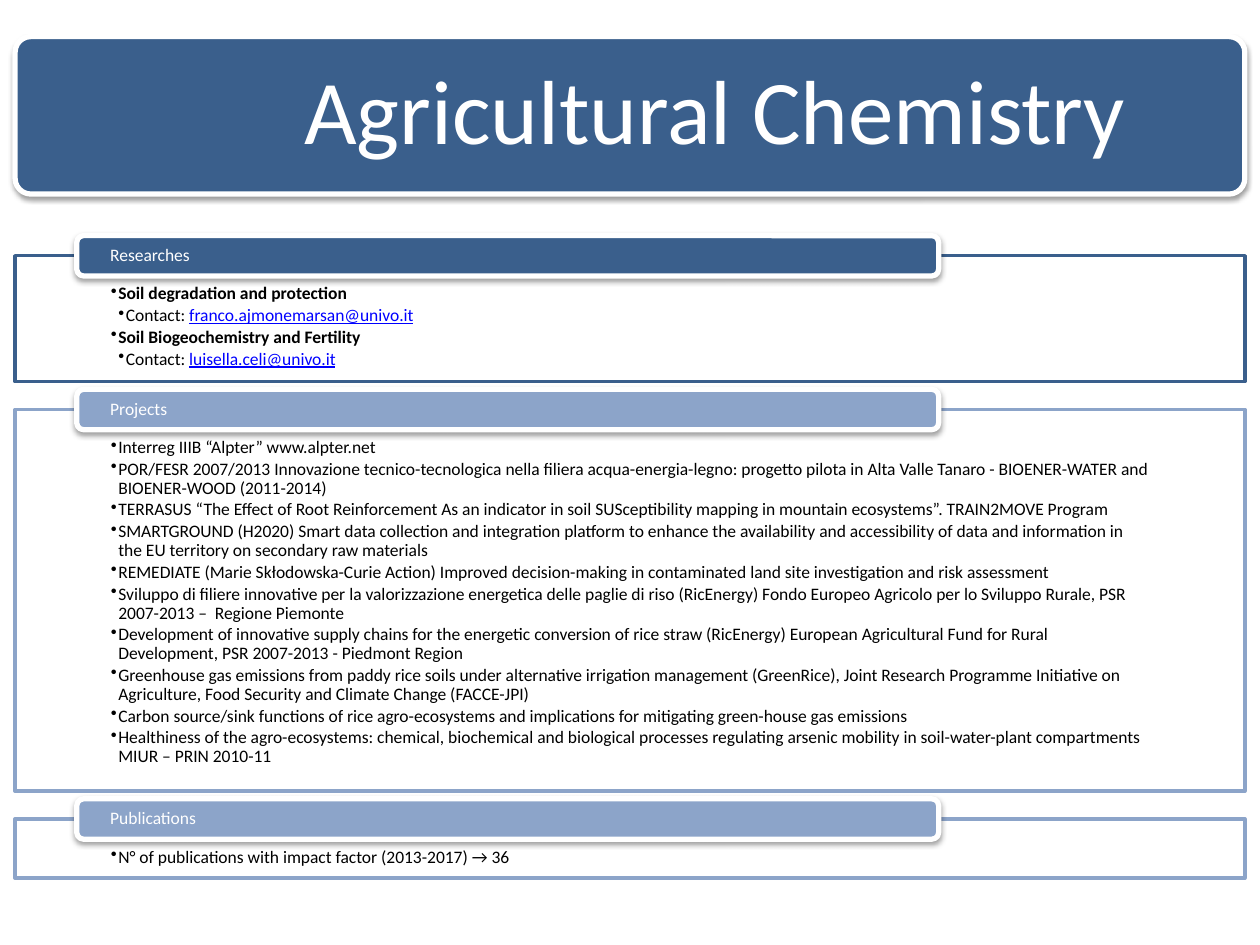
import lxml.etree
import pptx
import pptx.dml.color
import pptx.enum.shapes
import pptx.enum.text
import pptx.oxml.ns
import pptx.util

COLORS = {
    "navy": "3A5F8C",
    "periwinkle": "8CA4C9",
    "white": "FFFFFF",
    "black": "000000",
    "link": "0000FF",
}
FONT = "Calibri"
COLUMNS, ROWS = 100, 75
SLIDE_WIDTH, SLIDE_HEIGHT = pptx.util.Inches(10), pptx.util.Inches(7.5)
COLUMN, ROW = SLIDE_WIDTH / COLUMNS, SLIDE_HEIGHT / ROWS

LEFT, WIDTH = 1.2, 97.6
TITLE_BOX = (LEFT, 2.9, WIDTH, 12.5)
FIRST_SECTION_TOP, SECTION_GAP = 20.3, 2.2
TAB_INDENT, TAB_RISE, TAB_WIDTH, TAB_HEIGHT = 4.9, 1.6, 68.4, 3.2
BULLET_INDENT = 0.6

SECTIONS = [
    ("Researches", "navy", 10, [
        ("heading", "Soil degradation and protection"),
        ("contact", "franco.ajmonemarsan@univo.it"),
        ("heading", "Soil Biogeochemistry and Fertility"),
        ("contact", "luisella.celi@univo.it"),
    ]),
    ("Projects", "periwinkle", 30.3, [
        ("item", "Interreg IIIB “Alpter” www.alpter.net"),
        ("item", "POR/FESR 2007/2013 Innovazione tecnico-tecnologica nella filiera "
                 "acqua-energia-legno: progetto pilota in Alta Valle Tanaro - "
                 "BIOENER-WATER and BIOENER-WOOD (2011-2014)"),
        ("item", "TERRASUS “The Effect of Root Reinforcement As an indicator in soil "
                 "SUSceptibility mapping in mountain ecosystems”. TRAIN2MOVE Program"),
        ("item", "SMARTGROUND (H2020) Smart data collection and integration platform to "
                 "enhance the availability and accessibility of data and information in "
                 "the EU territory on secondary raw materials"),
        ("item", "REMEDIATE (Marie Skłodowska-Curie Action) Improved decision-making in "
                 "contaminated land site investigation and risk assessment"),
        ("item", "Sviluppo di filiere innovative per la valorizzazione energetica delle "
                 "paglie di riso (RicEnergy) Fondo Europeo Agricolo per lo Sviluppo "
                 "Rurale, PSR 2007-2013 –  Regione Piemonte"),
        ("item", "Development of innovative supply chains for the energetic conversion of "
                 "rice straw (RicEnergy) European Agricultural Fund for Rural "
                 "Development, PSR 2007-2013 - Piedmont Region"),
        ("item", "Greenhouse gas emissions from paddy rice soils under alternative "
                 "irrigation management (GreenRice), Joint Research Programme Initiative "
                 "on Agriculture, Food Security and Climate Change (FACCE-JPI)"),
        ("item", "Carbon source/sink functions of rice agro-ecosystems and implications "
                 "for mitigating green-house gas emissions"),
        ("item", "Healthiness of the agro-ecosystems: chemical, biochemical and biological "
                 "processes regulating arsenic mobility in soil-water-plant compartments "
                 "MIUR – PRIN 2010-11"),
    ]),
    ("Publications", "periwinkle", 4.7, [
        ("item", "N° of publications with impact factor (2013-2017) → 36"),
    ]),
]


def columns(count):
    return round(count * COLUMN)


def rows(count):
    return round(count * ROW)


def rgb(name):
    return pptx.dml.color.RGBColor.from_string(COLORS[name])


def add_panel(slide, kind, box, fill, line, line_width, insets, anchor):
    left, top, width, height = box
    shape = slide.shapes.add_shape(
        kind, columns(left), rows(top), columns(width), rows(height))
    shape.shadow.inherit = False
    shape.fill.solid()
    shape.fill.fore_color.rgb = rgb(fill)
    shape.line.color.rgb = rgb(line)
    shape.line.width = pptx.util.Pt(line_width)
    frame = shape.text_frame
    frame.word_wrap = True
    frame.vertical_anchor = anchor
    frame.margin_left, frame.margin_right = columns(insets[0]), columns(insets[2])
    frame.margin_top, frame.margin_bottom = rows(insets[1]), rows(insets[3])
    return shape


def style_paragraph(paragraph, size, color, space_after=0):
    paragraph.alignment = pptx.enum.text.PP_ALIGN.LEFT
    paragraph.line_spacing = 0.9
    paragraph.space_after = pptx.util.Pt(space_after)
    paragraph.font.name = FONT
    paragraph.font.size = pptx.util.Pt(size)
    paragraph.font.color.rgb = rgb(color)


def add_shadow(shape):
    qn = pptx.oxml.ns.qn
    effects = shape._element.spPr.find(qn("a:effectLst"))
    shadow = lxml.etree.SubElement(
        effects, qn("a:outerShdw"), blurRad=str(pptx.util.Pt(3.1)),
        dist=str(pptx.util.Pt(1.6)), dir="5400000", rotWithShape="0")
    color = lxml.etree.SubElement(shadow, qn("a:srgbClr"), val=COLORS["black"])
    lxml.etree.SubElement(color, qn("a:alpha"), val="38000")


def add_bullet(paragraph, level):
    paragraph.level = level
    properties = paragraph._p.get_or_add_pPr()
    properties.set("marL", str(columns(BULLET_INDENT * level)))
    properties.set("indent", str(-columns(BULLET_INDENT)))
    lxml.etree.SubElement(properties, pptx.oxml.ns.qn("a:buChar"), char="•")


def add_banner(slide, box, text, fill, size, insets):
    shape = add_panel(
        slide, pptx.enum.shapes.MSO_SHAPE.ROUNDED_RECTANGLE, box, fill, "white", 3,
        insets, pptx.enum.text.MSO_ANCHOR.MIDDLE)
    add_shadow(shape)
    paragraph = shape.text_frame.paragraphs[0]
    paragraph.text = text
    style_paragraph(paragraph, size, "white")
    return shape


def add_title(slide, box):
    banner = add_banner(
        slide, box, "Agricultural Chemistry", "navy", 52, (22.6, 2.2, 2.2, 2.2))
    banner.adjustments[0] = 0.1


def add_section(slide, box, heading, color, items):
    left, top = box[:2]
    body = add_panel(
        slide, pptx.enum.shapes.MSO_SHAPE.RECTANGLE, box, "white", color, 2,
        (7.6, 2.3, 7.6, 0.8), pptx.enum.text.MSO_ANCHOR.TOP)
    frame = body.text_frame
    for index, (kind, text) in enumerate(items):
        paragraph = frame.add_paragraph() if index else frame.paragraphs[0]
        add_bullet(paragraph, 2 if kind == "contact" else 1)
        style_paragraph(paragraph, 10, "black", 1.6)
        paragraph.font.bold = kind == "heading"
        if kind == "contact":
            paragraph.add_run().text = "Contact: "
        run = paragraph.add_run()
        run.text = text
        if kind == "contact":
            run.font.color.rgb = rgb("link")
            run.font.underline = True
    tab_box = (left + TAB_INDENT, top - TAB_RISE, TAB_WIDTH, TAB_HEIGHT)
    add_banner(slide, tab_box, heading, color, 10, (2.5, 0, 2.5, 0))


def main():
    presentation = pptx.Presentation()
    presentation.slide_width, presentation.slide_height = SLIDE_WIDTH, SLIDE_HEIGHT
    slide = presentation.slides.add_slide(presentation.slide_layouts[6])
    add_title(slide, TITLE_BOX)
    top = FIRST_SECTION_TOP
    for heading, color, height, items in SECTIONS:
        add_section(slide, (LEFT, top, WIDTH, height), heading, color, items)
        top += height + SECTION_GAP
    presentation.save("out.pptx")


if __name__ == "__main__":
    main()
